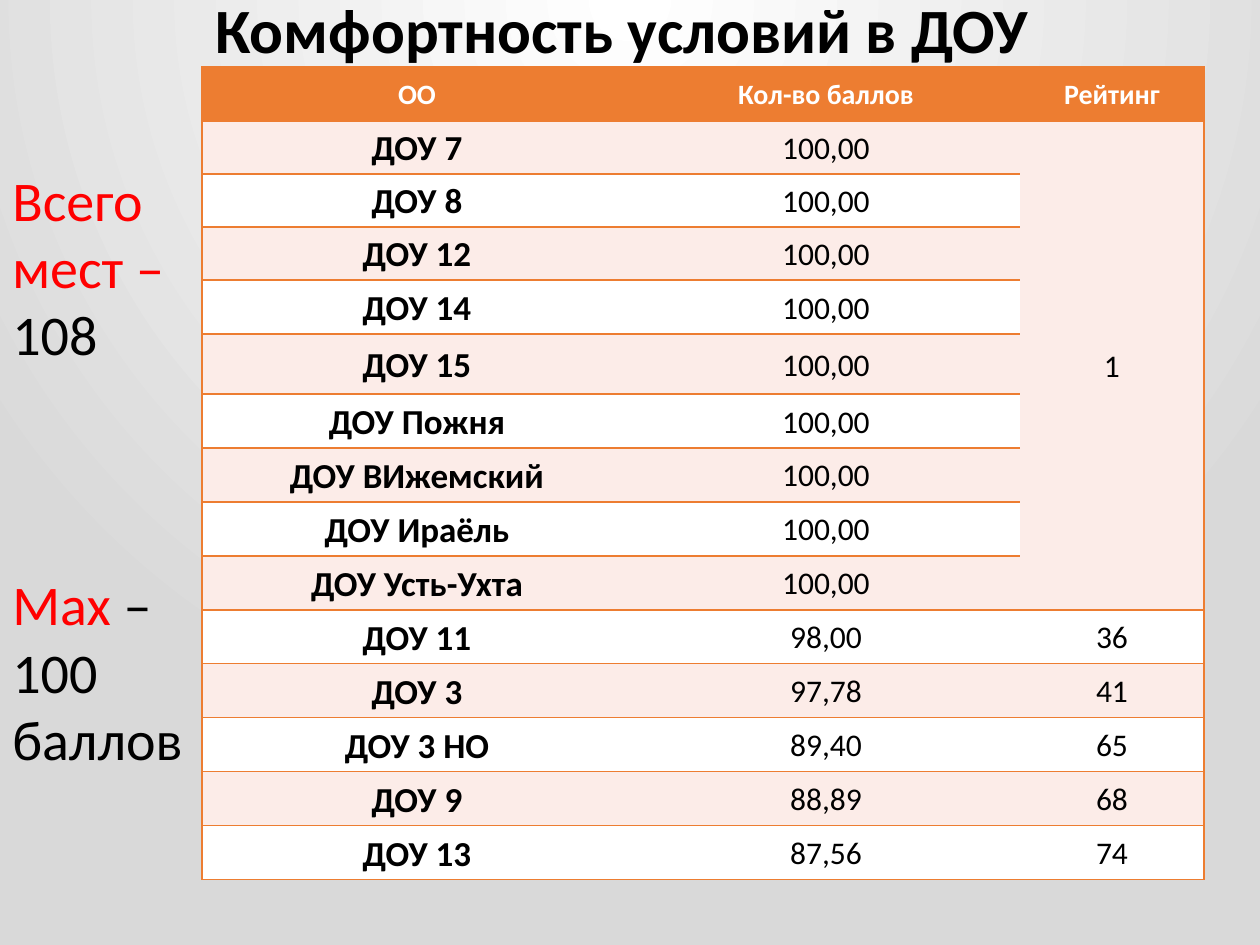
from typing import NamedTuple

from lxml import etree
from pptx import Presentation
from pptx.dml.color import RGBColor
from pptx.enum.text import MSO_ANCHOR, PP_ALIGN
from pptx.oxml.ns import qn
from pptx.util import Emu, Pt

PX = 914400 // 126
CENTER, LEFT = PP_ALIGN.CENTER, PP_ALIGN.LEFT
MIDDLE, TOP = MSO_ANCHOR.MIDDLE, MSO_ANCHOR.TOP
FONT = "Calibri"
ORANGE, PINK, WHITE = "ED7D31", "FCECE8", "FFFFFF"
BLACK, RED, GREY = "000000", "FF0000", "D9D9D9"
NO_STYLE = "{2D5ABB26-0587-4C30-8999-92F81FD0307C}"


class Row(NamedTuple):
    name: str
    score: str
    rank: str = ""


HEADER = Row("ОО", "Кол-во баллов", "Рейтинг")
ROWS = [
    Row("ДОУ 7", "100,00", "1"),
    Row("ДОУ 8", "100,00"),
    Row("ДОУ 12", "100,00"),
    Row("ДОУ 14", "100,00"),
    Row("ДОУ 15", "100,00"),
    Row("ДОУ Пожня", "100,00"),
    Row("ДОУ ВИжемский", "100,00"),
    Row("ДОУ Ираёль", "100,00"),
    Row("ДОУ Усть-Ухта", "100,00"),
    Row("ДОУ 11", "98,00", "36"),
    Row("ДОУ 3", "97,78", "41"),
    Row("ДОУ 3 НО", "89,40", "65"),
    Row("ДОУ 9", "88,89", "68"),
    Row("ДОУ 13", "87,56", "74"),
]
COL_WIDTHS = [430, 388, 184]
ROW_HEIGHTS = [54, 53, 53, 53, 54, 60] + [54] * 9
TIED = 9  # leading rows that share first place


def px(n: int) -> Emu:
    return Emu(n * PX)


def rgb(color: str) -> RGBColor:
    return RGBColor.from_string(color)


def add_text(p, text: str, *, size: int, color: str = BLACK, bold: bool = False,
             align=LEFT, spacing: float = 1.0) -> None:
    p.alignment = align
    p.line_spacing = spacing
    r = p.add_run()
    r.text = text
    r.font.name = FONT
    r.font.size = Pt(size)
    r.font.bold = bold
    r.font.color.rgb = rgb(color)


def add_box(s, x: int, y: int, w: int, h: int, anchor=TOP):
    tf = s.shapes.add_textbox(px(x), px(y), px(w), px(h)).text_frame
    tf.word_wrap = True
    tf.vertical_anchor = anchor
    return tf


def set_background(s) -> None:
    fill = s.background.fill
    fill.gradient()
    for stop, color, position in zip(fill.gradient_stops, (WHITE, GREY), (0, 1)):
        stop.color.rgb = rgb(color)
        stop.position = position
    grad = s.element.find(".//" + qn("a:gradFill"))
    grad.remove(grad.find(qn("a:lin")))
    circle = etree.SubElement(grad, qn("a:path"), path="circle")
    etree.SubElement(circle, qn("a:fillToRect"),
                     l="50000", t="-80000", r="50000", b="180000")


def add_borders(cell, sides: str) -> None:
    tc_pr = cell._tc.get_or_add_tcPr()
    for side in sides:
        ln = etree.SubElement(tc_pr, qn(f"a:ln{side}"), w=str(Pt(1)))
        fill = etree.SubElement(ln, qn("a:solidFill"))
        etree.SubElement(fill, qn("a:srgbClr"), val=ORANGE)


def add_score_table(s, x: int, y: int) -> None:
    frame = s.shapes.add_table(len(ROWS) + 1, len(COL_WIDTHS), px(x), px(y),
                               px(sum(COL_WIDTHS)), px(sum(ROW_HEIGHTS)))
    table = frame.table
    table._tbl.tblPr.find(qn("a:tableStyleId")).text = NO_STYLE
    for col, width in zip(table.columns, COL_WIDTHS):
        col.width = px(width)
    for row, height in zip(table.rows, ROW_HEIGHTS):
        row.height = px(height)
    table.cell(1, 2).merge(table.cell(TIED, 2))

    for i, row in enumerate([HEADER, *ROWS]):
        band = ORANGE if i == 0 else PINK if i % 2 else WHITE
        for j, text in enumerate(row):
            cell = table.cell(i, j)
            if cell.is_spanned:
                add_borders(cell, "R")
                continue
            add_borders(cell, ("LTB", "TB", "RTB")[j])
            cell.fill.solid()
            cell.fill.fore_color.rgb = rgb(band)
            cell.vertical_anchor = MIDDLE
            cell.margin_left = cell.margin_right = px(9 if j == 1 else 5)
            cell.margin_top = cell.margin_bottom = 0
            add_text(cell.text_frame.paragraphs[0], text,
                     size=16 if i == 0 else 20 if j == 0 else 18,
                     color=WHITE if i == 0 else BLACK,
                     bold=i == 0 or j == 0, align=CENTER, spacing=1.07)


def main() -> None:
    prs = Presentation()
    prs.slide_width, prs.slide_height = px(1260), px(945)
    s = prs.slides.add_slide(prs.slide_layouts[6])
    set_background(s)

    # Title
    tf = add_box(s, 37, -58, 1170, 183, MIDDLE)
    add_text(tf.paragraphs[0], "Комфортность условий в ДОУ",
             size=36, bold=True, align=CENTER, spacing=0.9)

    # Scores and ranks
    add_score_table(s, 202, 67)

    # Side notes
    tf = add_box(s, 0, 159, 263, 624)
    places, maximum, points = tf.paragraphs[0], tf.add_paragraph(), tf.add_paragraph()
    maximum.space_before = Pt(116)
    for p, text, color in [
        (places, "Всего мест – ", RED),
        (places, "108", BLACK),
        (maximum, "Max ", RED),
        (maximum, "–", BLACK),
        (points, "100 баллов", BLACK),
    ]:
        add_text(p, text, size=32, color=color)

    prs.save("out.pptx")


if __name__ == "__main__":
    main()
